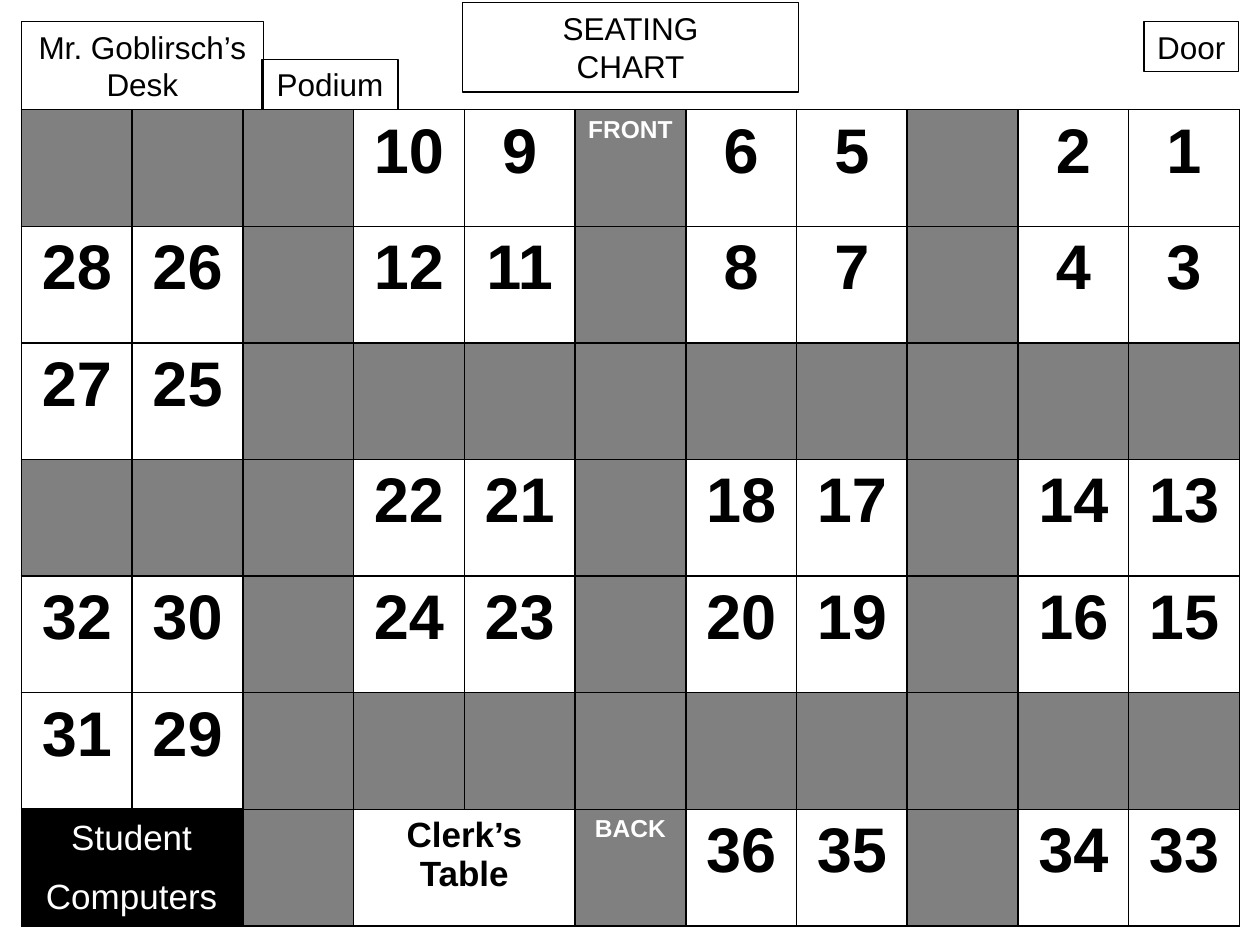
"""Build a classroom seating chart slide."""
import pptx
import pptx.dml.color
import pptx.enum.shapes
import pptx.enum.text
import pptx.oxml
import pptx.oxml.ns
import pptx.util

Inches = pptx.util.Inches
Pt = pptx.util.Pt
BLACK, WHITE, GRAY = "000000", "FFFFFF", "808080"

SEATS = [
    ["", "", "", "10", "9", "FRONT", "6", "5", "", "2", "1"],
    ["28", "26", "", "12", "11", "", "8", "7", "", "4", "3"],
    ["27", "25"] + [""] * 9,
    ["", "", "", "22", "21", "", "18", "17", "", "14", "13"],
    ["32", "30", "", "24", "23", "", "20", "19", "", "16", "15"],
    ["31", "29"] + [""] * 9,
    ["", "", "", "Clerk’s Table", "", "BACK", "36", "35", "", "34", "33"],
]


def color(code):
    return pptx.dml.color.RGBColor.from_string(code)


class Chart:
    def __init__(self, slide, font="Arial"):
        self.slide = slide
        self.font = font

    def style(self, para, size, ink, bold=False):
        para.alignment = pptx.enum.text.PP_ALIGN.CENTER
        para.font.name = self.font
        para.font.size = Pt(size)
        para.font.bold = bold
        para.font.color.rgb = color(ink)

    def label(self, text, left, top, width, height, size=18, ink=BLACK, gap=0):
        box = self.slide.shapes.add_shape(
            pptx.enum.shapes.MSO_SHAPE.RECTANGLE,
            Inches(left), Inches(top), Inches(width), Inches(height))
        box.shadow.inherit = False
        box.fill.background()
        box.line.color.rgb = color(BLACK)
        box.line.width = Pt(0.75)
        frame = box.text_frame
        frame.text = text
        frame.word_wrap = False
        frame.vertical_anchor = pptx.enum.text.MSO_ANCHOR.TOP
        for para in frame.paragraphs:
            self.style(para, size, ink)
        frame.paragraphs[-1].space_before = Pt(gap)

    def border(self, cell):
        props = cell._tc.get_or_add_tcPr()
        for side in "LRTB":
            props.append(pptx.oxml.parse_xml(
                f'<a:ln{side} {pptx.oxml.ns.nsdecls("a")} w="{Pt(1)}"><a:solidFill>'
                f'<a:srgbClr val="{BLACK}"/></a:solidFill></a:ln{side}>'))

    def cell(self, cell, text, fill):
        self.border(cell)
        if fill:
            cell.fill.solid()
            cell.fill.fore_color.rgb = color(fill)
        else:
            cell.fill.background()
        if text:
            cell.text = text
            size = 36 if text.isdigit() else 14 if fill else 20
            self.style(cell.text_frame.paragraphs[0], size,
                       WHITE if fill else BLACK, True)

    def grid(self, rows, left, top, width, height):
        table = self.slide.shapes.add_table(
            len(rows), len(rows[0]), Inches(left), Inches(top),
            Inches(width), Inches(height)).table
        table.first_row = table.horz_banding = False
        last = len(rows) - 1
        for y, row in enumerate(rows):
            for x, text in enumerate(row):
                if y == last and x < 2:
                    fill = BLACK
                elif text in ("", "FRONT", "BACK"):
                    fill = GRAY
                else:
                    fill = None
                self.cell(table.cell(y, x), text, fill)
        desk = rows[last].index("Clerk’s Table")
        table.cell(last, desk).merge(table.cell(last, desk + 1))


def main():
    deck = pptx.Presentation()
    deck.slide_width, deck.slide_height = Inches(10), Inches(7.5)
    chart = Chart(deck.slides.add_slide(deck.slide_layouts[6]))
    chart.label("Mr. Goblirsch’s\nDesk", 0.17, 0.17, 1.92, 0.71)
    chart.grid(SEATS, 0.17, 0.87, 9.67, 6.48)
    chart.label("Podium", 2.08, 0.47, 1.08, 0.4)
    chart.label("Student\nComputers", 0.17, 6.42, 1.75, 0.93, 20, WHITE, 10)
    chart.label("Door", 9.08, 0.17, 0.75, 0.4)
    chart.label("SEATING\nCHART", 3.67, 0.02, 2.67, 0.71)
    deck.save("out.pptx")


if __name__ == "__main__":
    main()
